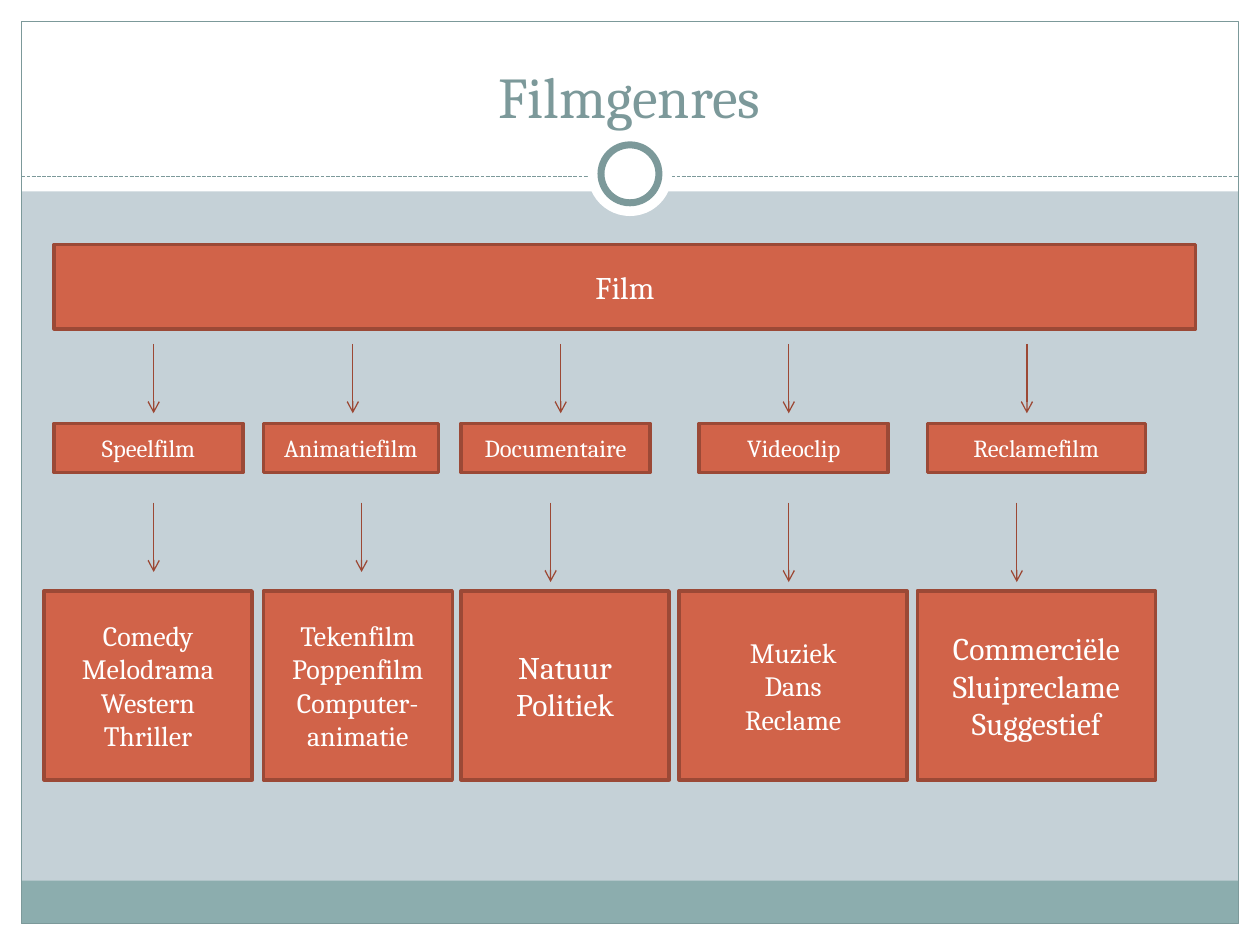
import pptx
import pptx.util
import pptx.dml.color
import pptx.enum.dml
import pptx.enum.shapes
import pptx.enum.text
import pptx.oxml.ns
import lxml.etree

# The slide is a grid of 100 columns by 75 rows of square cells.
COLUMNS, ROWS = 100, 75
CELL = pptx.util.Inches(0.1)
EDGE = 1.7
FONT = "Cambria"
COLORS = {
    "background": "C5D1D7",
    "white": "FFFFFF",
    "band": "8CADAE",
    "frame": "7C999A",
    "box": "D16349",
    "border": "9B4936",
    "arrow": "9C4834",
}
SHAPES = pptx.enum.shapes.MSO_SHAPE

# Per genre: name, (left, width), arrow column
GENRES = [
    ("Speelfilm", (4.3, 15), 12.2),
    ("Animatiefilm", (20.9, 13.9), 28),
    ("Documentaire", (36.6, 15), 44.5),
    ("Videoclip", (55.5, 15), 62.6),
    ("Reclamefilm", (73.6, 17.3), 81.5),
]
# Per genre: lines, text size, (left, width), arrow column, arrow end row
EXAMPLES = [
    (["Comedy", "Melodrama", "Western", "Thriller"], 16, (3.5, 16.5), 12.2, 45.4),
    (["Tekenfilm", "Poppenfilm", "Computer-animatie"], 16, (20.9, 15), 28.7, 45.4),
    (["Natuur", "Politiek"], 18, (36.6, 16.5), 43.7, 46.2),
    (["Muziek", "Dans", "Reclame"], 16, (53.9, 18.1), 62.6, 46.2),
    (["Commerciële", "Sluipreclame", "Suggestief"], 18, (72.8, 18.9), 80.7, 46.2),
]


def cells(*counts):
    return [round(count * CELL) for count in counts]


def color(name):
    return pptx.dml.color.RGBColor.from_string(COLORS[name])


def write_text(shape, lines, size, ink="white",
               anchor=pptx.enum.text.MSO_ANCHOR.MIDDLE):
    frame = shape.text_frame
    frame.word_wrap = True
    frame.vertical_anchor = anchor
    for index, line in enumerate(lines):
        para = frame.paragraphs[0] if index == 0 else frame.add_paragraph()
        para.alignment = pptx.enum.text.PP_ALIGN.CENTER
        span = para.add_run()
        span.text = line
        span.font.name = FONT
        span.font.size = pptx.util.Pt(size)
        span.font.color.rgb = color(ink)


def add_block(page, place, fill=None, line=None, weight=0.75, kind=SHAPES.RECTANGLE):
    shape = page.shapes.add_shape(kind, *cells(*place))
    shape.shadow.inherit = False
    if fill:
        shape.fill.solid()
        shape.fill.fore_color.rgb = color(fill)
    else:
        shape.fill.background()
    if line:
        shape.line.color.rgb = color(line)
        shape.line.width = pptx.util.Pt(weight)
    else:
        shape.line.fill.background()
    return shape


def add_box(page, place, lines, size):
    box = add_block(page, place, "box", "border", 2, SHAPES.FLOWCHART_PROCESS)
    write_text(box, lines, size)


def add_line(page, start, end, ink):
    line = page.shapes.add_connector(
        pptx.enum.shapes.MSO_CONNECTOR.STRAIGHT, *cells(*start, *end))
    line.line.color.rgb = color(ink)
    line.line.width = pptx.util.Pt(0.75)
    properties = line._element.spPr
    lxml.etree.SubElement(properties, pptx.oxml.ns.qn("a:effectLst"))
    return line


def add_arrow(page, column, top, bottom):
    arrow = add_line(page, (column, top), (column, bottom), "arrow")
    outline = arrow.line._get_or_add_ln()
    lxml.etree.SubElement(outline, pptx.oxml.ns.qn("a:tailEnd"), type="arrow")


def add_ring(page, diameter, line=None):
    middle, height = COLUMNS / 2, 13.8
    place = (middle - diameter / 2, height - diameter / 2, diameter, diameter)
    add_block(page, place, "white", line, 4, SHAPES.OVAL)


def add_backdrop(page):
    page.background.fill.solid()
    page.background.fill.fore_color.rgb = color("background")
    # White margins, header and footer band
    for place in [
        (0, ROWS - EDGE, COLUMNS, EDGE),
        (0, 0, COLUMNS, 15.2),
        (0, 0, EDGE, ROWS),
        (COLUMNS - EDGE, 0, EDGE, ROWS),
    ]:
        add_block(page, place, "white")
    inner = COLUMNS - 2 * EDGE
    add_block(page, (EDGE, 69.9, inner, 3.4), "band")
    add_block(page, (EDGE, EDGE, inner, ROWS - 2 * EDGE), line="frame")
    # Dashed rule with the ring on top
    rule = add_line(page, (EDGE, 14), (COLUMNS - EDGE, 14), "frame")
    rule.line.dash_style = pptx.enum.dml.MSO_LINE.SQUARE_DOT
    add_ring(page, 6.7)
    add_ring(page, 4.6, "frame")


def add_title(page, text):
    title = page.shapes.add_textbox(*cells(3.3, 2.5, 93.3, 8.3))
    write_text(title, [text], 33, ink="frame",
               anchor=pptx.enum.text.MSO_ANCHOR.BOTTOM)


def main():
    deck = pptx.Presentation()
    deck.slide_width, deck.slide_height = cells(COLUMNS, ROWS)
    page = deck.slides.add_slide(deck.slide_layouts[6])
    add_backdrop(page)
    add_title(page, "Filmgenres")

    # Tree: film, genres, examples
    add_box(page, (4.3, 19.4, 90.6, 6.7), ["Film"], 18)
    for name, (left, width), column in GENRES:
        add_arrow(page, column, 27.3, 32.8)
        add_box(page, (left, 33.6, width, 3.9), [name], 14)
    for lines, size, (left, width), column, bottom in EXAMPLES:
        add_arrow(page, column, 39.9, bottom)
        add_box(page, (left, 46.9, width, 15), lines, size)
    deck.save("out.pptx")


if __name__ == "__main__":
    main()
